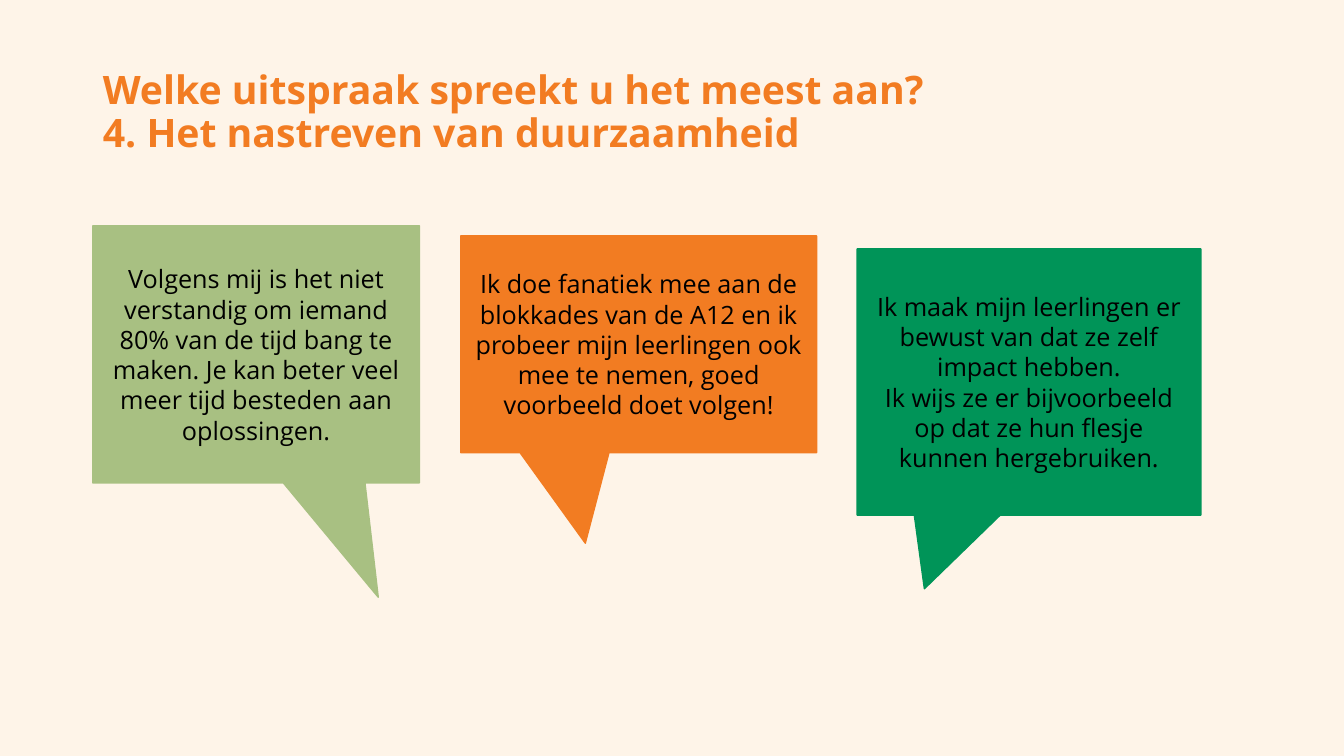
import pptx
import pptx.dml.color
import pptx.enum.shapes
import pptx.enum.text
import pptx.util

COLORS = {
    "background": "FEF4E8",
    "orange": "F27C22",
    "sage": "A8C082",
    "green": "009458",
    "text": "000000",
}
FONT = "Open Sans"
TITLE = "Welke uitspraak spreekt u het meest aan?\n4. Het nastreven van duurzaamheid"
STATEMENTS = [
    ("sage", (0.92, 2.24, 3.24, 2.55), (0.374, 0.945),
     "Volgens mij is het niet verstandig om iemand 80% van de tijd bang te maken. "
     "Je kan beter veel meer tijd besteden aan oplossingen."),
    ("orange", (4.57, 2.34, 3.53, 2.15), (-0.15, 0.918),
     "Ik doe fanatiek mee aan de blokkades van de A12 en ik probeer mijn leerlingen "
     "ook mee te nemen, goed voorbeeld doet volgen!"),
    ("green", (8.5, 2.47, 3.41, 2.64), (-0.304, 0.777),
     "Ik maak mijn leerlingen er bewust van dat ze zelf impact hebben.\n"
     "Ik wijs ze er bijvoorbeeld op dat ze hun flesje kunnen hergebruiken."),
]


def color(name):
    return pptx.dml.color.RGBColor.from_string(COLORS[name])


def write_text(shape, text, size, color_name, alignment, bold=False):
    frame = shape.text_frame
    frame.word_wrap = True
    frame.auto_size = pptx.enum.text.MSO_AUTO_SIZE.NONE
    frame.vertical_anchor = pptx.enum.text.MSO_ANCHOR.MIDDLE
    para = frame.paragraphs[0]
    para.text = text
    para.alignment = alignment
    para.font.name = FONT
    para.font.size = pptx.util.Pt(size)
    para.font.bold = bold
    para.font.color.rgb = color(color_name)
    return para


def add_title(slide, box):
    title = slide.shapes.title
    title.left, title.top, title.width, title.height = map(pptx.util.Inches, box)
    para = write_text(title, TITLE, 28, "orange", pptx.enum.text.PP_ALIGN.LEFT, bold=True)
    para.line_spacing = 0.9


def add_callout(slide, box, color_name, tip, text):
    callout = slide.shapes.add_shape(
        pptx.enum.shapes.MSO_SHAPE.RECTANGULAR_CALLOUT, *map(pptx.util.Inches, box))
    callout.adjustments[0], callout.adjustments[1] = tip
    callout.shadow.inherit = False
    callout.fill.solid()
    callout.fill.fore_color.rgb = color(color_name)
    callout.line.color.rgb = color(color_name)
    callout.line.width = pptx.util.Pt(1)
    write_text(callout, text, 18, "text", pptx.enum.text.PP_ALIGN.CENTER)


def main():
    deck = pptx.Presentation()
    deck.slide_width = pptx.util.Inches(13.33)
    deck.slide_height = pptx.util.Inches(7.5)
    slide = deck.slides.add_slide(deck.slide_layouts.get_by_name("Title Only"))
    slide.background.fill.solid()
    slide.background.fill.fore_color.rgb = color("background")
    add_title(slide, (0.92, 0.4, 11.5, 1.45))
    for color_name, box, tip, text in STATEMENTS:
        add_callout(slide, box, color_name, tip, text)
    deck.save("out.pptx")


if __name__ == "__main__":
    main()
